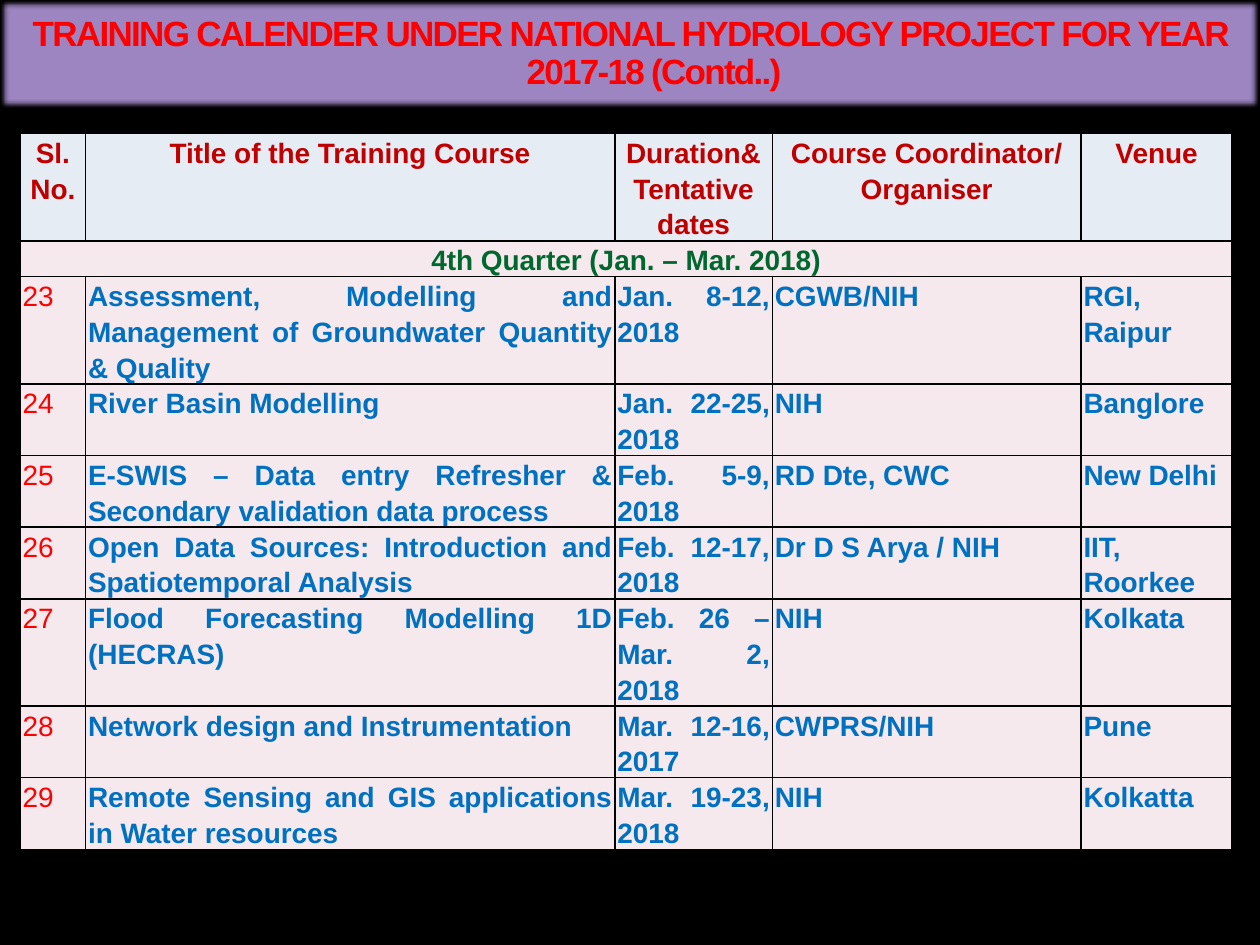
"""Build the training calendar slide with its title band and course table."""
from lxml.etree import SubElement
from pptx import Presentation
from pptx.dml.color import RGBColor
from pptx.enum.shapes import MSO_SHAPE
from pptx.enum.text import MSO_ANCHOR, PP_ALIGN
from pptx.oxml import parse_xml
from pptx.oxml.ns import nsdecls, qn
from pptx.util import Inches, Pt

BLACK = RGBColor(0x00, 0x00, 0x00)
PURPLE = RGBColor(0x9C, 0x85, 0xC0)
RED = RGBColor(0xFF, 0x00, 0x00)
DARK_RED = RGBColor(0xC0, 0x00, 0x00)
GREEN = RGBColor(0x00, 0x68, 0x2F)
BLUE = RGBColor(0x00, 0x70, 0xC0)
HEADER_FILL = RGBColor(0xE6, 0xEC, 0xF3)
BODY_FILL = RGBColor(0xF6, 0xE9, 0xED)

FONT = "Arial"
LINE_HEIGHT = 0.28
COLUMN_WIDTHS = [0.52, 4.2, 1.25, 2.45, 1.2]
ROW_LINES = [3, 1, 3, 2, 2, 2, 3, 2, 2]
TITLE = "TRAINING CALENDER UNDER NATIONAL HYDROLOGY PROJECT FOR YEAR 2017-18 (Contd..)"
HEADERS = ["Sl. No.", "Title of the Training Course", "Duration& Tentative dates",
           "Course Coordinator/\nOrganiser", "Venue"]
QUARTER = "4th Quarter (Jan. – Mar. 2018)"
COURSES = [
    ("23", "Assessment, Modelling and Management of Groundwater Quantity & Quality",
     "Jan. 8-12, 2018", "CGWB/NIH", "RGI, Raipur"),
    ("24", "River Basin Modelling", "Jan. 22-25, 2018", "NIH", "Banglore"),
    ("25", "E-SWIS – Data entry Refresher & Secondary validation data process",
     "Feb. 5-9, 2018", "RD Dte, CWC", "New Delhi"),
    ("26", "Open Data Sources: Introduction and Spatiotemporal Analysis",
     "Feb. 12-17, 2018", "Dr D S Arya / NIH", "IIT, Roorkee"),
    ("27", "Flood Forecasting Modelling 1D (HECRAS)",
     "Feb. 26 – Mar. 2, 2018", "NIH", "Kolkata"),
    ("28", "Network design and Instrumentation", "Mar. 12-16, 2017", "CWPRS/NIH", "Pune"),
    ("29", "Remote Sensing and GIS applications in Water resources",
     "Mar. 19-23, 2018", "NIH", "Kolkatta"),
]


def set_font(font, size, color, bold=True):
    """Apply the slide typeface with a size, colour and weight."""
    font.name = FONT
    font.size = Pt(size)
    font.bold = bold
    font.color.rgb = color


def add_borders(cell):
    """Draw a thin black line on every side of a cell."""
    properties = cell._tc.get_or_add_tcPr()
    for side in ("lnL", "lnR", "lnT", "lnB"):
        line = SubElement(properties, qn(f"a:{side}"), w=str(Pt(1)))
        fill = SubElement(line, qn("a:solidFill"))
        SubElement(fill, qn("a:srgbClr"), val=str(BLACK))


def format_cell(cell, text, fill, color, alignment, bold=True):
    """Fill one table cell with styled text."""
    add_borders(cell)
    cell.fill.solid()
    cell.fill.fore_color.rgb = fill
    cell.margin_left = cell.margin_right = Inches(0.02)
    cell.margin_top = cell.margin_bottom = 0
    cell.text = text
    for paragraph in cell.text_frame.paragraphs:
        paragraph.alignment = alignment
        paragraph.line_spacing = 1.15
        set_font(paragraph.font, 16, color, bold)


def add_course_table(slide):
    """Add the calendar table with header, quarter and course rows."""
    table = slide.shapes.add_table(
        len(ROW_LINES), len(COLUMN_WIDTHS), Inches(0.16), Inches(1.06),
        Inches(sum(COLUMN_WIDTHS)), Inches(LINE_HEIGHT * sum(ROW_LINES))).table
    table.horz_banding = False
    for column, width in zip(table.columns, COLUMN_WIDTHS):
        column.width = Inches(width)
    for row, lines in zip(table.rows, ROW_LINES):
        row.height = Inches(LINE_HEIGHT * lines)

    for cell, text in zip(table.rows[0].cells, HEADERS):
        format_cell(cell, text, HEADER_FILL, DARK_RED, PP_ALIGN.CENTER)

    quarter_cells = list(table.rows[1].cells)
    quarter_cells[0].merge(quarter_cells[-1])
    format_cell(quarter_cells[0], QUARTER, BODY_FILL, GREEN, PP_ALIGN.CENTER)
    for cell in quarter_cells[1:]:
        add_borders(cell)

    for row_index, course in enumerate(COURSES, start=2):
        number, *details = table.rows[row_index].cells
        format_cell(number, course[0], BODY_FILL, RED, PP_ALIGN.LEFT, bold=False)
        for cell, text in zip(details, course[1:]):
            format_cell(cell, text, BODY_FILL, BLUE, PP_ALIGN.JUSTIFY)


def add_soft_shadow(shape):
    """Give a shape a centred shadow and soft edges."""
    shape._element.spPr.append(parse_xml(
        f'<a:effectLst {nsdecls("a")}>'
        f'<a:outerShdw blurRad="{Pt(7.5)}" dist="0" dir="0">'
        f'<a:srgbClr val="{BLACK}"><a:alpha val="50000"/></a:srgbClr></a:outerShdw>'
        f'<a:softEdge rad="{Pt(2.5)}"/></a:effectLst>'))


def add_title_band(slide):
    """Add the purple band that carries the slide title."""
    band = slide.shapes.add_shape(MSO_SHAPE.RECTANGLE, 0, 0, Inches(10), Inches(0.86))
    band.fill.solid()
    band.fill.fore_color.rgb = PURPLE
    band.line.fill.background()
    add_soft_shadow(band)
    band.text_frame.word_wrap = True
    band.text_frame.vertical_anchor = MSO_ANCHOR.MIDDLE

    paragraph = band.text_frame.paragraphs[0]
    paragraph.alignment = PP_ALIGN.CENTER
    paragraph.line_spacing = 0.9
    indent = Inches(0.38)
    paragraph_properties = paragraph._p.get_or_add_pPr()
    paragraph_properties.set("marL", str(indent))
    paragraph_properties.set("indent", str(-indent))

    run = paragraph.add_run()
    run.text = TITLE
    set_font(run.font, 20, RED)
    run_properties = run._r.get_or_add_rPr()
    run_properties.set("spc", "-100")
    run_properties.insert(0, parse_xml(
        f'<a:ln {nsdecls("a")} w="{Pt(0.25)}"><a:solidFill><a:srgbClr val="3C4422">'
        '<a:alpha val="25000"/></a:srgbClr></a:solidFill></a:ln>'))


def main():
    """Create the presentation and save it."""
    presentation = Presentation()
    presentation.slide_width = Inches(10)
    presentation.slide_height = Inches(7.5)
    slide = presentation.slides.add_slide(presentation.slide_layouts[6])
    slide.background.fill.solid()
    slide.background.fill.fore_color.rgb = BLACK
    add_course_table(slide)
    add_title_band(slide)
    presentation.save("out.pptx")


if __name__ == "__main__":
    main()
